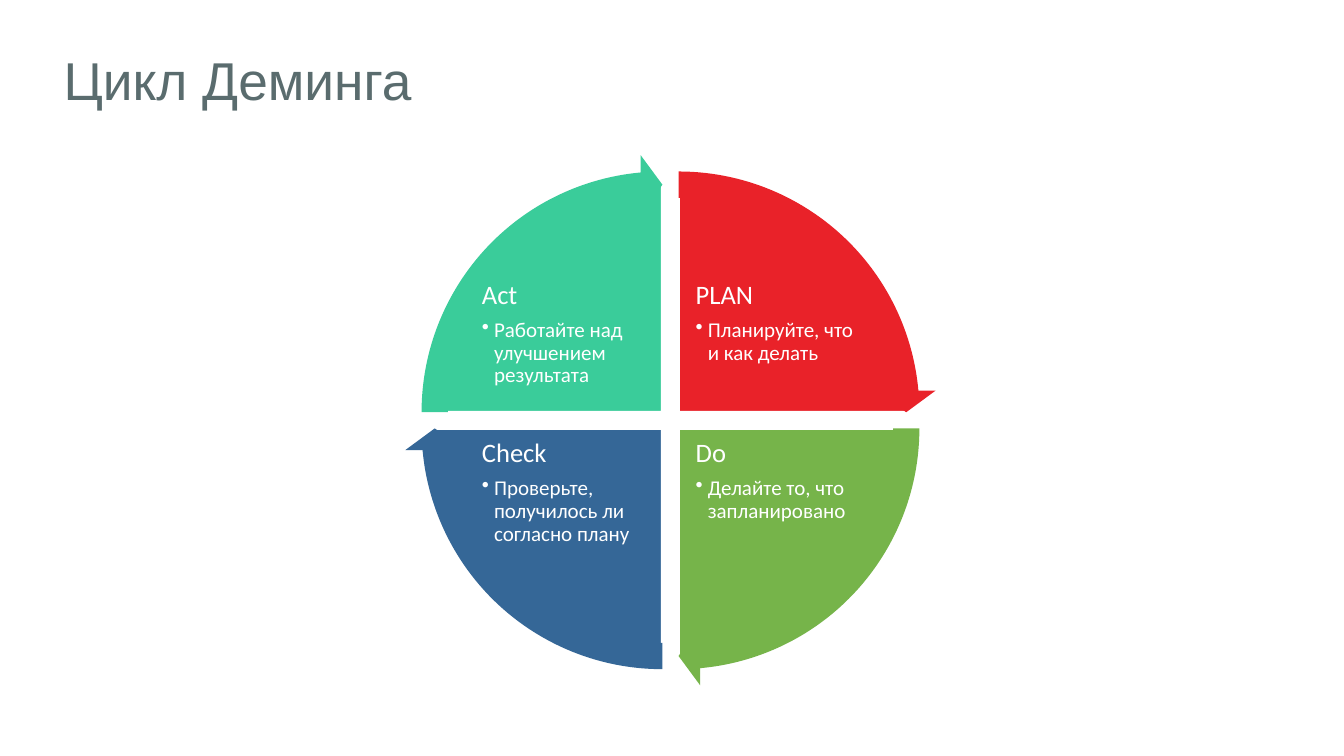
from lxml import etree
from pptx import Presentation
from pptx import util as u
from pptx.dml.color import RGBColor
from pptx.enum import shapes, text
from pptx.oxml.ns import qn

WHITE = RGBColor(0xFF, 0xFF, 0xFF)
SLATE = RGBColor(0x5A, 0x6C, 0x6E)
RED = RGBColor(0xE9, 0x22, 0x29)
GREEN = RGBColor(0x76, 0xB4, 0x4A)
BLUE = RGBColor(0x35, 0x67, 0x97)
MINT = RGBColor(0x3A, 0xCC, 0x9A)

# Wheel geometry in inches; angles in units of 216 per full turn
HUB_X, HUB_Y = 6.65, 4.17
SHIFT = 0.08
PIE_SIZE, ARROW_SIZE = 4.56, 5.12
NOTE_W, NOTE_H = 1.68, 1.25
NOTE_GAP_X, NOTE_GAP_Y = 0.22, 0.16
TURN, QUARTER, ARROW_SWEEP = 216, 54, 50.725

# Stage, advice, colour, side (right +1), half (lower +1), start angle
STAGES = [
    ("PLAN", "Планируйте, что и как делать", RED, 1, -1, 162),
    ("Do", "Делайте то, что запланировано", GREEN, 1, 1, 0),
    ("Check", "Проверьте, получилось ли согласно плану", BLUE, -1, 1, 54),
    ("Act", "Работайте над улучшением результата", MINT, -1, -1, 108),
]

deck = Presentation()
deck.slide_width, deck.slide_height = u.Inches(13.33), u.Inches(7.5)
slide = deck.slides.add_slide(deck.slide_layouts[5])


def add_wheel_part(kind, size, side, half, color, adjustments):
    part = slide.shapes.add_shape(
        kind,
        u.Inches(HUB_X + side * SHIFT - size / 2),
        u.Inches(HUB_Y + half * SHIFT - size / 2),
        u.Inches(size), u.Inches(size))
    for index, value in enumerate(adjustments):
        part.adjustments[index] = value
    part.shadow.inherit = False
    part.fill.solid()
    part.fill.fore_color.rgb = color
    part.line.fill.background()
    return part


def set_frame(frame, inset_x, inset_y, anchor):
    frame.word_wrap = True
    frame.auto_size = text.MSO_AUTO_SIZE.NONE
    frame.vertical_anchor = anchor
    frame.margin_left = frame.margin_right = u.Inches(inset_x)
    frame.margin_top = frame.margin_bottom = u.Inches(inset_y)


# Title
title = slide.shapes.title
title.left, title.top = u.Inches(0.59), u.Inches(0.39)
title.width, title.height = u.Inches(12.14), u.Inches(0.79)
title.text_frame.text = "Цикл Деминга"
set_frame(title.text_frame, 0.04, 0.02, text.MSO_ANCHOR.MIDDLE)
heading = title.text_frame.paragraphs[0]
heading.alignment = text.PP_ALIGN.LEFT
heading_font = heading.runs[0].font
heading_font.name, heading_font.size = "Arial", u.Pt(38)
heading_font.color.rgb = SLATE

# Quarters with their notes
for stage, advice, color, side, half, start in STAGES:
    quarter = add_wheel_part(shapes.MSO_SHAPE.PIE, PIE_SIZE, side, half, color,
                             [start, (start + QUARTER) % TURN])
    quarter.line.color.rgb = WHITE
    quarter.line.width = u.Pt(2)

    note = slide.shapes.add_textbox(
        u.Inches(HUB_X + side * (NOTE_GAP_X + NOTE_W / 2) - NOTE_W / 2),
        u.Inches(HUB_Y + half * (NOTE_GAP_Y + NOTE_H / 2) - NOTE_H / 2),
        u.Inches(NOTE_W), u.Inches(NOTE_H)).text_frame
    set_frame(note, 0.03, 0.03, text.MSO_ANCHOR.TOP)
    note.text = f"{stage}\n{advice}"
    name_line, advice_line = note.paragraphs

    advice_line.level = 1
    bullet_props = advice_line._p.get_or_add_pPr()
    bullet_props.set("marL", str(u.Inches(0.12)))
    bullet_props.set("indent", str(u.Inches(-0.12)))
    etree.SubElement(bullet_props, qn("a:buChar")).set("char", "•")

    for line, size, after in ((name_line, 19, 6.65), (advice_line, 15, 2.25)):
        line.alignment = text.PP_ALIGN.LEFT
        line.line_spacing = 0.9
        line.space_after = u.Pt(after)
        font = line.runs[0].font
        font.name, font.size = "Calibri", u.Pt(size)
        font.color.rgb = WHITE

# Arrows around the rim
for stage, advice, color, side, half, start in STAGES:
    add_wheel_part(shapes.MSO_SHAPE.CIRCULAR_ARROW, ARROW_SIZE, side, half, color,
                   [0.051, 3.275, start + ARROW_SWEEP, start, 0.059])

deck.save("out.pptx")
